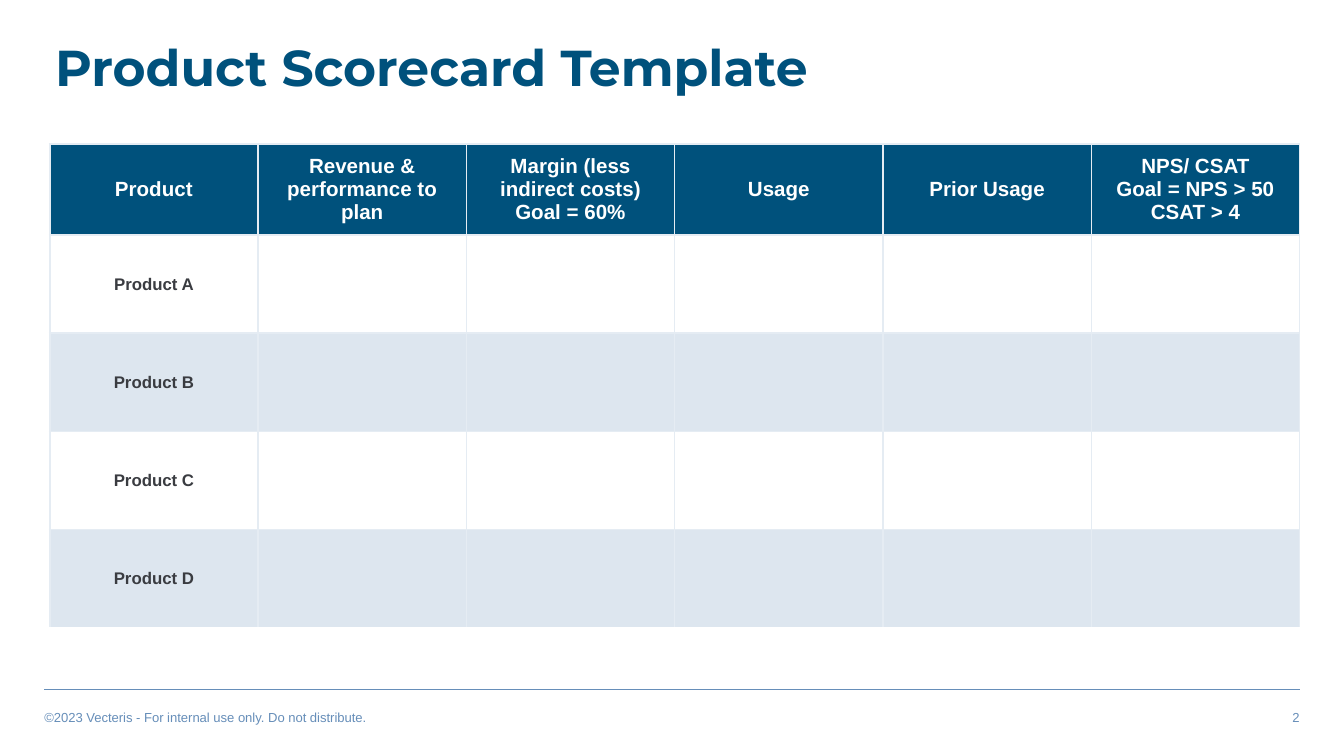
from lxml.etree import SubElement
from pptx import Presentation
from pptx.dml.color import RGBColor
from pptx.enum.shapes import MSO_CONNECTOR
from pptx.enum.text import MSO_ANCHOR, PP_ALIGN
from pptx.oxml.ns import qn
from pptx.util import Inches, Pt

NAVY = RGBColor(0x00, 0x51, 0x7C)
STEEL = RGBColor(0x66, 0x8E, 0xB9)
BAND = RGBColor(0xDD, 0xE6, 0xEF)
BORDER = RGBColor(0xE5, 0xEC, 0xF3)
INK = RGBColor(0x3A, 0x3C, 0x41)
WHITE = RGBColor(0xFF, 0xFF, 0xFF)

SLIDE_WIDTH = 10
SLIDE_HEIGHT = SLIDE_WIDTH * 9 / 16

HEADERS = [
    "Product",
    "Revenue & performance to plan",
    "Margin (less indirect costs)\nGoal = 60%",
    "Usage",
    "Prior Usage",
    "NPS/ CSAT\nGoal = NPS > 50\nCSAT > 4",
]
PRODUCTS = ["Product A", "Product B", "Product C", "Product D"]
COLUMN_WIDTH, HEADER_HEIGHT, ROW_HEIGHT = 1.55, 0.68, 0.73


def write_text(frame, text, size, color, font="Arial", bold=False,
               align=PP_ALIGN.LEFT, line_spacing=None):
    """Fill a text frame, one paragraph per line of text."""
    frame.text = text
    for paragraph in frame.paragraphs:
        paragraph.alignment = align
        paragraph.line_spacing = line_spacing
        for run in paragraph.runs:
            run.font.name = font
            run.font.size = Pt(size)
            run.font.bold = bold
            run.font.color.rgb = color


def add_text(slide, left, top, width, height, text, size, color,
             anchor=MSO_ANCHOR.TOP, **text_format):
    box = slide.shapes.add_textbox(
        Inches(left), Inches(top), Inches(width), Inches(height))
    frame = box.text_frame
    frame.word_wrap = True
    frame.vertical_anchor = anchor
    frame.margin_left = frame.margin_right = Inches(0.08)
    frame.margin_top = frame.margin_bottom = Inches(0.04)
    write_text(frame, text, size, color, **text_format)


def add_footer_rule(slide):
    rule = slide.shapes.add_connector(
        MSO_CONNECTOR.STRAIGHT,
        Inches(0.33), Inches(5.13), Inches(9.67), Inches(5.13))
    rule.line.color.rgb = STEEL
    rule.line.width = Pt(1)
    SubElement(rule._element.spPr, qn("a:effectLst"))


def set_borders(cell, bottom):
    properties = cell._tc.get_or_add_tcPr()
    for side, color in zip("LRTB", (BORDER, BORDER, BORDER, bottom)):
        line = SubElement(properties, qn(f"a:ln{side}"), w=str(Pt(1)))
        fill = SubElement(line, qn("a:solidFill"))
        SubElement(fill, qn("a:srgbClr"), val=str(color))


def style_cell(cell, fill, bottom=BORDER):
    set_borders(cell, bottom)
    cell.fill.solid()
    cell.fill.fore_color.rgb = fill
    cell.vertical_anchor = MSO_ANCHOR.MIDDLE
    cell.margin_left = cell.margin_right = Inches(0.05)
    cell.margin_top = cell.margin_bottom = Inches(0.02)


def add_scorecard(slide):
    row_count, column_count = len(PRODUCTS) + 1, len(HEADERS)
    scorecard = slide.shapes.add_table(
        row_count, column_count, Inches(0.37), Inches(1.07),
        Inches(COLUMN_WIDTH * column_count),
        Inches(HEADER_HEIGHT + ROW_HEIGHT * len(PRODUCTS))).table
    for column in scorecard.columns:
        column.width = Inches(COLUMN_WIDTH)
    for row in scorecard.rows:
        row.height = Inches(ROW_HEIGHT)
    scorecard.rows[0].height = Inches(HEADER_HEIGHT)

    for column, header in enumerate(HEADERS):
        cell = scorecard.cell(0, column)
        style_cell(cell, NAVY)
        write_text(cell.text_frame, header, 11, WHITE, bold=True,
                   align=PP_ALIGN.CENTER)
    for row, product in enumerate(PRODUCTS, start=1):
        fill = WHITE if row % 2 else BAND
        bottom = WHITE if row == len(PRODUCTS) else BORDER
        for column in range(column_count):
            style_cell(scorecard.cell(row, column), fill, bottom)
        write_text(scorecard.cell(row, 0).text_frame, product, 9, INK,
                   bold=True, align=PP_ALIGN.CENTER)


def main():
    deck = Presentation()
    deck.slide_width = Inches(SLIDE_WIDTH)
    deck.slide_height = Inches(SLIDE_HEIGHT)
    slide = deck.slides.add_slide(deck.slide_layouts[6])

    add_footer_rule(slide)
    add_text(slide, 0.25, 5.24, 4, 0.19,
             "©2023 Vecteris - For internal use only. Do not distribute.",
             7, STEEL)
    add_text(slide, 5.75, 5.24, 4, 0.19, "2", 7, STEEL, align=PP_ALIGN.RIGHT)
    add_text(slide, 0.33, 0.24, 7.74, 0.57, "Product Scorecard Template",
             27, NAVY, anchor=MSO_ANCHOR.MIDDLE, font="Montserrat",
             bold=True, line_spacing=0.9)
    add_scorecard(slide)

    deck.save("out.pptx")


if __name__ == "__main__":
    main()
